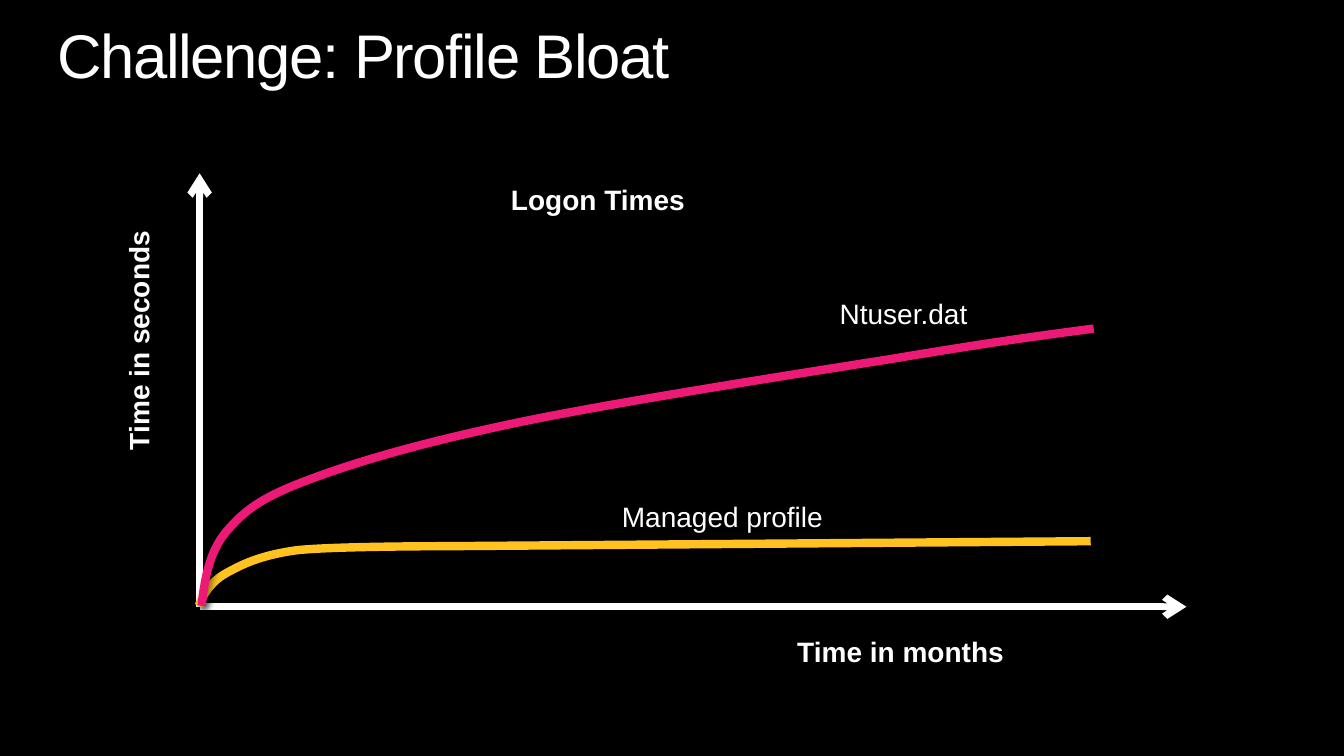
from pptx import Presentation
from pptx.dml.color import RGBColor
from pptx.enum import shapes, text
from pptx.oxml import ns, xmlchemy
from pptx.util import Pt

COLORS = {"black": "000000", "white": "FFFFFF", "gold": "FFC21F", "pink": "ED1977"}
FONT = "Arial"

MANAGED_CURVE = [
    (-0.7, 0.7), (2.9, 8.6), (7.2, 17.3), (18.7, 23.8),
    (30.2, 30.2), (43.2, 36.7), (69.1, 40.3),
    (95, 43.2), (175.7, 43.2), (175.7, 43.2),
    (636.5, 46.8),
]
NTUSER_CURVE = [
    (1.4, 0.7), (3.6, 19.4), (6.5, 38.2), (18.7, 53.3),
    (31.7, 68.4), (43.2, 77.8), (77.8, 90.7),
    (112.3, 103.7), (159.1, 117.4), (228.2, 131.8),
    (297.4, 146.2), (426.2, 166.3), (494.6, 177.1),
    (563, 188.6), (600.5, 193.7), (638.6, 198.7),
]
LABELS = [
    ("Managed profile", 294.5, 229.7, 159.1, False, 0),
    ("Ntuser.dat", 450, 84.2, 106.6, False, 0),
    ("Time in months", 419.8, 326.2, 163.4, True, 0),
    ("Time in seconds", -129.6, 103, 172.1, True, 270),
    ("Logon Times", 215.3, 2.9, 139.7, True, 0),
]


def color(name):
    return RGBColor.from_string(COLORS[name])


def add_element(parent, tag, **attributes):
    element = xmlchemy.OxmlElement(tag)
    for key, value in attributes.items():
        element.set(key, str(value))
    parent.append(element)
    return element


def style_font(font, size, bold=False):
    font.name = FONT
    font.size = Pt(size)
    font.bold = bold
    font.color.rgb = color("white")


def style_line(line, name, width):
    line.color.rgb = color(name)
    line.width = Pt(width)


def add_title(page, wording, left, top, width, height):
    title = page.shapes.title
    title.left, title.top, title.width, title.height = map(Pt, (left, top, width, height))
    frame = title.text_frame
    frame.margin_left = frame.margin_top = frame.margin_right = frame.margin_bottom = 0
    frame.vertical_anchor = text.MSO_ANCHOR.TOP
    frame.auto_size = text.MSO_AUTO_SIZE.NONE
    frame.word_wrap = True
    para = frame.paragraphs[0]
    span = para.add_run()
    span.text = wording
    span.font._element.set("spc", "-100")
    para.alignment = text.PP_ALIGN.LEFT
    para.line_spacing = 0.9
    style_font(para.font, 44)


def add_axis(page, start, end):
    axis = page.shapes.add_connector(
        shapes.MSO_CONNECTOR.STRAIGHT, *map(Pt, (*start, *end)))
    style_line(axis.line, "white", 5)
    add_element(axis.line._get_or_add_ln(), "a:tailEnd", type="arrow")
    add_element(axis._element.spPr, "a:effectLst")


def bend_segments(curve):
    segments = list(curve._element.iter(ns.qn("a:lnTo")))
    for first in range(0, len(segments) - 2, 3):
        bezier = xmlchemy.OxmlElement("a:cubicBezTo")
        segments[first].addprevious(bezier)
        for segment in segments[first:first + 3]:
            bezier.append(segment[0])
            segment.getparent().remove(segment)


def add_curve(page, points, name, left, bottom):
    start, *rest = [(Pt(left + x), Pt(bottom - y)) for x, y in points]
    builder = page.shapes.build_freeform(*start)
    builder.add_line_segments(rest, close=False)
    curve = builder.convert_to_shape()
    bend_segments(curve)
    curve.fill.background()
    style_line(curve.line, name, 6)
    curve.shadow.inherit = False
    effects = curve._element.spPr.find(ns.qn("a:effectLst"))
    shadow = add_element(effects, "a:outerShdw", blurRad=Pt(4), dist=Pt(3),
                         dir=45 * 60000, algn="tl", rotWithShape=0)
    tint = add_element(shadow, "a:srgbClr", val=COLORS["black"])
    add_element(tint, "a:alpha", val=40000)


def add_label(page, wording, left, top, width, bold, rotation):
    box = page.shapes.add_textbox(*map(Pt, (left, top, width, 31.7)))
    box.rotation = rotation
    frame = box.text_frame
    frame.word_wrap = False
    frame.auto_size = text.MSO_AUTO_SIZE.SHAPE_TO_FIT_TEXT
    para = frame.paragraphs[0]
    para.text = wording
    style_font(para.font, 20, bold)


def add_logon_graph(page, left, top, width, height):
    bottom = top + height
    origin = (left, bottom)
    add_axis(page, origin, (left, top))
    add_axis(page, origin, (left + width, bottom))
    add_curve(page, MANAGED_CURVE, "gold", left, bottom)
    add_curve(page, NTUSER_CURVE, "pink", left, bottom)
    for wording, x, y, label_width, bold, rotation in LABELS:
        add_label(page, wording, left + x, top + y, label_width, bold, rotation)


def main():
    deck = Presentation()
    deck.slide_width, deck.slide_height = Pt(960), Pt(540)
    page = deck.slides.add_slide(deck.slide_layouts.get_by_name("Title Only"))
    page.background.fill.solid()
    page.background.fill.fore_color.rgb = color("black")
    add_title(page, "Challenge: Profile Bloat", 41, 18, 877.7, 48.2)
    add_logon_graph(page, 142.6, 123.8, 704.9, 309.6)
    deck.save("out.pptx")


if __name__ == "__main__":
    main()
